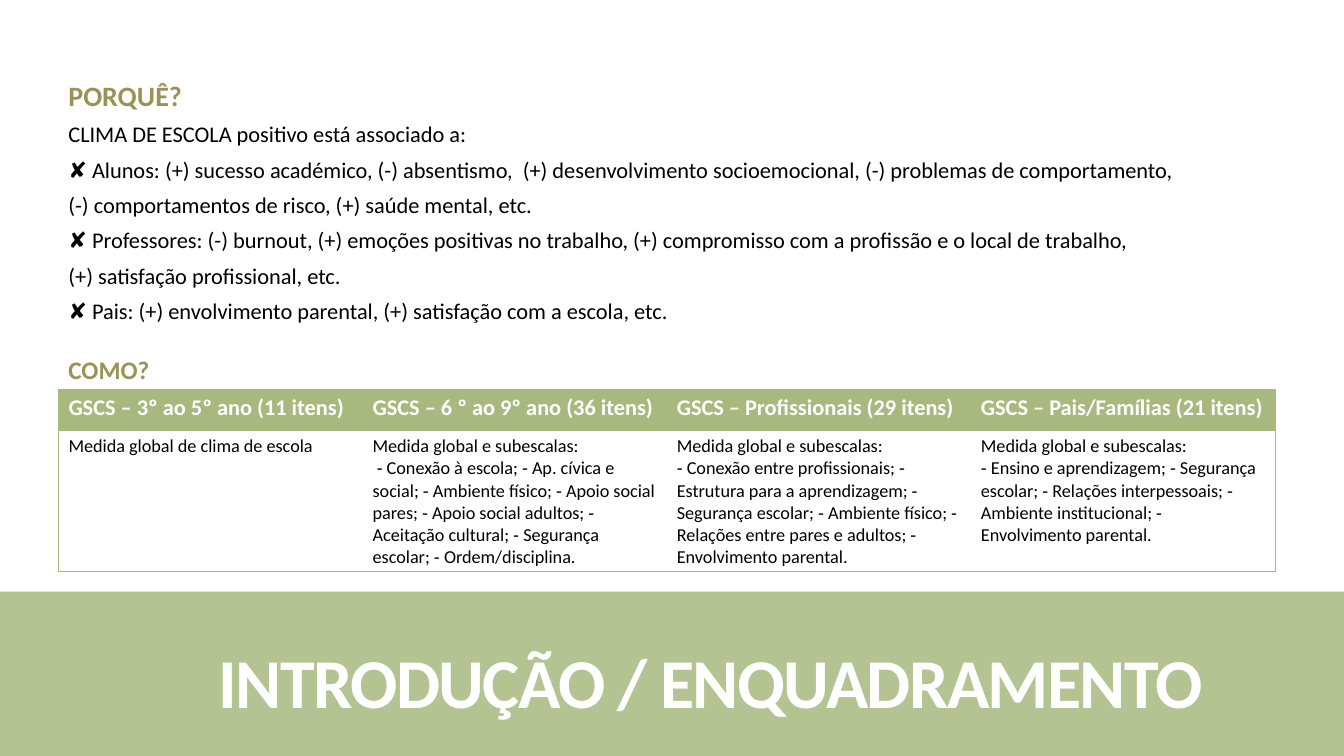
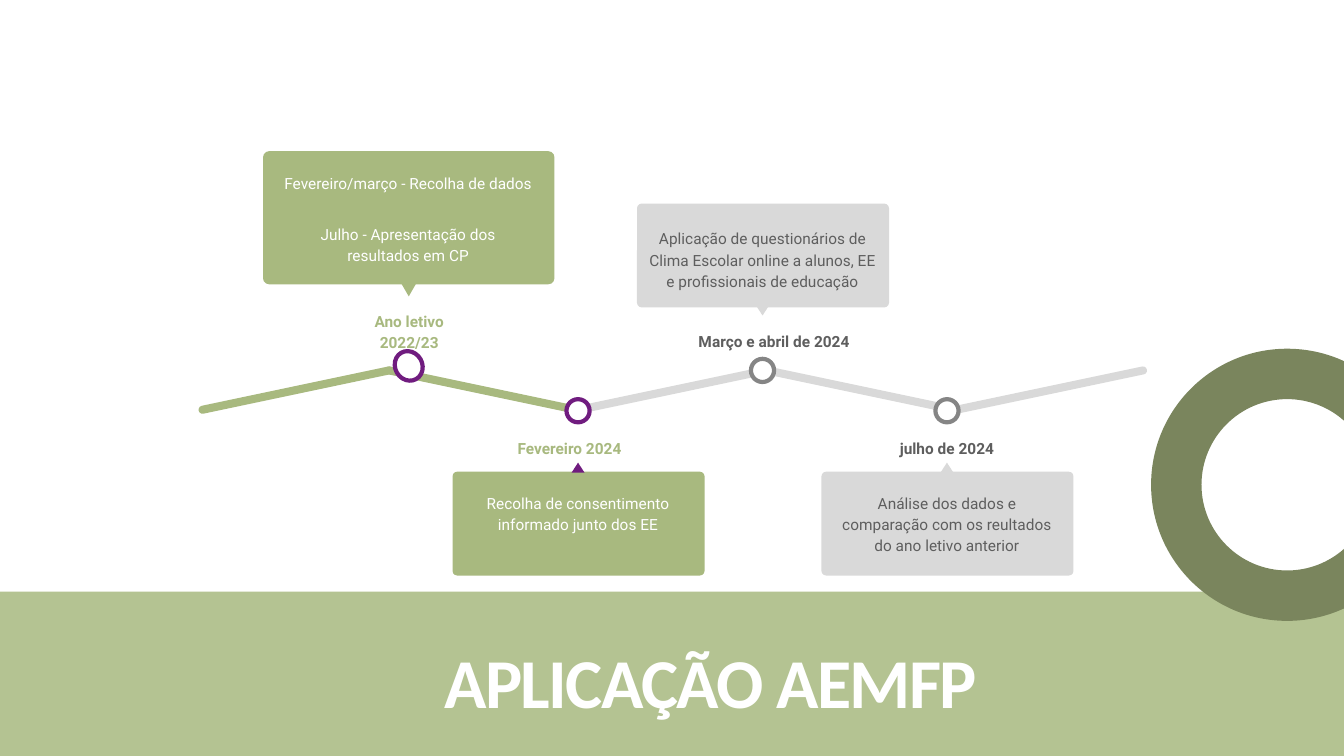
import math

from lxml import etree
from pptx import Presentation
from pptx import util as u
from pptx.dml.color import RGBColor
from pptx.enum import shapes, text
from pptx.oxml import ns

PX = 9144  # 100 px to the inch
SLIDE_W, SLIDE_H = 1333.33, 750
C = {
    "green": "A8B97F", "olive": "7A855D", "khaki": "9B9256", "purple": "701C7F",
    "silver": "D9D9D9", "gray": "858585", "dark": "5E5E5E",
    "white": "FFFFFF", "black": "000000",
}
SHAPE = shapes.MSO_SHAPE
ALIGN = text.PP_ALIGN
PLAIN_TABLE = "{2D5ABB26-0587-4C30-8999-92F81FD0307C}"

REASONS = [
    "CLIMA DE ESCOLA positivo está associado a:",
    "✘ Alunos: (+) sucesso académico, (-) absentismo,  (+) desenvolvimento socioemocional, (-) problemas de comportamento,",
    "(-) comportamentos de risco, (+) saúde mental, etc.",
    "✘ Professores: (-) burnout, (+) emoções positivas no trabalho, (+) compromisso com a profissão e o local de trabalho,",
    "(+) satisfação profissional, etc.",
    "✘ Pais: (+) envolvimento parental, (+) satisfação com a escola, etc.",
]
SUBSCALES = "Medida global e subescalas:"
SCALES = [
    ("GSCS – 3º ao 5º ano (11 itens)", ["Medida global de clima de escola"]),
    ("GSCS – 6 º ao 9º ano (36 itens)", [
        SUBSCALES,
        " ‐ Conexão à escola; ‐ Ap. cívica e social; ‐ Ambiente físico; ‐ Apoio social pares; "
        "‐ Apoio social adultos; ‐ Aceitação cultural; ‐ Segurança escolar; ‐ Ordem/disciplina."]),
    ("GSCS – Profissionais (29 itens)", [
        SUBSCALES,
        "‐ Conexão entre profissionais; ‐ Estrutura para a aprendizagem; ‐ Segurança escolar; "
        "‐ Ambiente físico; ‐ Relações entre pares e adultos; ‐ Envolvimento parental."]),
    ("GSCS – Pais/Famílias (21 itens)", [
        SUBSCALES,
        "‐ Ensino e aprendizagem; ‐ Segurança escolar; ‐ Relações interpessoais; "
        "‐ Ambiente institucional; ‐ Envolvimento parental."]),
]


def emu(*lengths):
    return [u.Emu(round(n * PX)) for n in lengths]


def rgb(name):
    return RGBColor.from_string(C[name])


def style(p, size, color, font="Calibri", bold=False):
    p.font.name, p.font.size, p.font.bold = font, u.Pt(size), bold
    p.font.color.rgb = rgb(color)


def set_margins(tf, left, top, right, bottom):
    (tf.margin_left, tf.margin_top,
     tf.margin_right, tf.margin_bottom) = emu(left, top, right, bottom)


def write(tf, lines, size, color, **kw):
    """Fill a text frame with one paragraph per line."""
    tf.text = "\n".join(lines)
    for p in tf.paragraphs:
        style(p, size, color, **kw)


def add_text(s, box, lines, size, color, **kw):
    tf = s.shapes.add_textbox(*emu(*box)).text_frame
    tf.word_wrap = True
    write(tf, lines, size, color, **kw)
    return tf


def paint(sp, fill, line=None):
    sp.shadow.inherit = False
    sp.fill.solid()
    sp.fill.fore_color.rgb = rgb(fill)
    if line:
        sp.line.color.rgb, sp.line.width = rgb(line), u.Pt(3)
    else:
        sp.line.fill.background()


def add_shape(s, kind, box, fill, rotation=0, adj=None, line=None):
    sp = s.shapes.add_shape(kind, *emu(*box))
    sp.rotation = rotation
    if adj is not None:
        sp.adjustments[0] = adj
    paint(sp, fill, line)


def add_titled_slide(prs, title):
    """Title-only slide whose title is the translucent bottom band."""
    s = prs.slides.add_slide(prs.slide_layouts[5])
    sp = s.shapes.title
    sp.left, sp.top, sp.width, sp.height = emu(0, 587, SLIDE_W, SLIDE_H - 587)
    sp.fill.solid()
    sp.fill.fore_color.rgb = rgb("green")
    color = sp.fill._xPr.find(".//" + ns.qn("a:srgbClr"))
    etree.SubElement(color, ns.qn("a:alpha"), val="85000")
    tf = sp.text_frame
    tf.auto_size = text.MSO_AUTO_SIZE.NONE
    tf.word_wrap = True
    tf.vertical_anchor = text.MSO_ANCHOR.MIDDLE
    set_margins(tf, 87, 32, 10, 5)
    write(tf, [title], 50, "white", bold=True)
    p = tf.paragraphs[0]
    p.alignment, p.line_spacing = ALIGN.CENTER, 0.85
    p.runs[0].font._element.set("spc", "-120")
    return s


# Table of scales
def set_borders(cell, sides):
    tc_pr = cell._tc.get_or_add_tcPr()
    for i, side in enumerate(sides):
        ln = etree.Element(ns.qn("a:ln" + side), w=str(u.Pt(0.75)))
        fill = etree.SubElement(ln, ns.qn("a:solidFill"))
        etree.SubElement(fill, ns.qn("a:srgbClr"), val=C["green"])
        tc_pr.insert(i, ln)


def add_scales_table(s, box, header_h):
    gf = s.shapes.add_table(2, len(SCALES), *emu(*box))
    table = gf.table
    table.horz_banding = False
    gf._element.find(".//" + ns.qn("a:tableStyleId")).text = PLAIN_TABLE
    table.rows[0].height, table.rows[1].height = emu(header_h, box[3] - header_h)
    last = len(SCALES) - 1
    for col, (name, details) in enumerate(SCALES):
        head, body = table.cell(0, col), table.cell(1, col)
        head.fill.solid()
        head.fill.fore_color.rgb = rgb("green")
        body.fill.background()
        write(head.text_frame, [name], 16, "white", bold=True)
        write(body.text_frame, details, 13, "black")
        edges = ["L"] * (col == 0) + ["R"] * (col == last)
        set_borders(head, edges + ["T"])
        set_borders(body, edges + ["T", "B"])


# Ring cut off by the right edge of the slide
def arc_curves(cx, cy, radius, backwards=False):
    """Bezier curves from one edge crossing to the other, four points each."""
    start = math.acos((SLIDE_W - cx) / radius)
    angles = [start, math.pi / 2, math.pi, 3 * math.pi / 2, 2 * math.pi - start]
    if backwards:
        angles.reverse()

    def point(angle, pull=0):
        return emu(cx + radius * (math.cos(angle) - pull * math.sin(angle)),
                   cy + radius * (math.sin(angle) + pull * math.cos(angle)))

    curves = []
    for a, b in zip(angles, angles[1:]):
        pull = 4 / 3 * math.tan((b - a) / 4)
        curves.append([point(a), point(a, pull), point(b, -pull), point(b)])
    return curves


def add_ring(s, cx, cy, outer, inner):
    outside = arc_curves(cx, cy, outer)
    inside = arc_curves(cx, cy, inner, backwards=True)
    fb = s.shapes.build_freeform(*outside[0][0])
    ends = [c[3] for c in outside] + [inside[0][0]] + [c[3] for c in inside]
    fb.add_line_segments(ends, close=True)
    sp = fb.convert_to_shape()
    # Bend every segment but the straight one between the arcs
    segments = list(sp._element.iter(ns.qn("a:lnTo")))
    for segment, curve in zip(segments, outside + [None] + inside):
        if curve:
            bend = etree.Element(ns.qn("a:cubicBezTo"))
            for x, y in curve[1:]:
                etree.SubElement(bend, ns.qn("a:pt"), x=str(x - sp.left), y=str(y - sp.top))
            segment.getparent().replace(segment, bend)
    paint(sp, "olive")


# Timeline
def add_zigzag(s):
    bars = zip((195, 380, 569, 755, 943), ["green"] * 2 + ["silver"] * 3)
    for i, (left, color) in enumerate(bars):
        tilt = 11.9 if i % 2 else -11.9
        add_shape(s, SHAPE.ROUNDED_RECTANGLE, (left, 383, 197, 8), color, tilt, 0.5)


def add_centered(s, box, lines, color, bold=False):
    tf = add_text(s, box, lines, 11, color, font="Roboto", bold=bold)
    set_margins(tf, 13, 13, 13, 13)
    for i, p in enumerate(tf.paragraphs):
        p.alignment, p.line_spacing = ALIGN.CENTER, 1.15
        if i:
            p.space_before = u.Pt(21)


def add_milestone(s, label, label_box, lines, text_box, card, dot, pointer, colors, above):
    fill, ink, label_ink, ring, tip = colors
    group = s.shapes.add_group_shape()
    add_shape(group, SHAPE.ROUNDED_RECTANGLE, card, fill, adj=0.045)
    add_shape(group, SHAPE.ISOSCELES_TRIANGLE, pointer, tip, 180 if above else 0)
    add_centered(group, text_box, lines, ink)
    add_centered(group, label_box, [label], label_ink, bold=True)
    add_shape(group, SHAPE.OVAL, dot, "white", 330.2, line=ring)


def build_introduction(prs):
    s = add_titled_slide(prs, "INTRODUÇÃO / ENQUADRAMENTO")
    tf = add_text(s, (58, 73, 1132, 283), ["PORQUÊ?"] + REASONS, 16, "black")
    style(tf.paragraphs[0], 20, "khaki", bold=True)
    for p in tf.paragraphs[1:]:
        p.space_before = u.Pt(6)
    add_scales_table(s, (58, 386, 1207, 181), 41)
    add_text(s, (58, 347, 103, 40), ["COMO?"], 18, "khaki", bold=True)


def build_application(prs):
    s = add_titled_slide(prs, "APLICAÇÃO AEMFP")
    add_ring(s, 1277, 481, 135, 85)
    add_zigzag(s)
    done = ("green", "white", "green", "purple")
    planned = ("silver", "dark", "dark", "gray", "silver")
    add_milestone(
        s, "julho de 2024", (861, 422, 157, 40),
        ["Análise dos dados e comparação com os reultados do ano letivo anterior"],
        (821, 474, 237, 91), (815, 468, 250, 103), (928, 396, 23, 23), (933, 459, 13, 10),
        planned, False)
    add_milestone(
        s, "Março e abril de 2024", (663, 316, 210, 40),
        ["Aplicação de questionários de Clima Escolar online a alunos, EE "
         "e profissionais de educação"],
        (627, 212, 259, 91), (632, 202, 250, 103), (745, 356, 23, 23), (750, 303, 13, 10),
        planned, True)
    add_milestone(
        s, "Fevereiro 2024", (489, 422, 152, 40),
        ["Recolha de consentimento informado junto dos EE"],
        (455, 474, 237, 91), (449, 468, 250, 103), (562, 396, 23, 23), (567, 459, 13, 10),
        done + ("purple",), False)
    add_milestone(
        s, "Ano letivo 2022/23", (347, 294, 118, 52),
        ["Fevereiro/março - Recolha de dados", "Julho - Apresentação dos resultados em CP"],
        (268, 157, 274, 117), (261, 150, 289, 132), (392, 348, 27, 30), (398, 281, 15, 13),
        done + ("green",), True)


def main():
    prs = Presentation()
    prs.slide_width, prs.slide_height = emu(SLIDE_W, SLIDE_H)
    build_introduction(prs)
    build_application(prs)
    prs.save("out.pptx")


if __name__ == "__main__":
    main()
